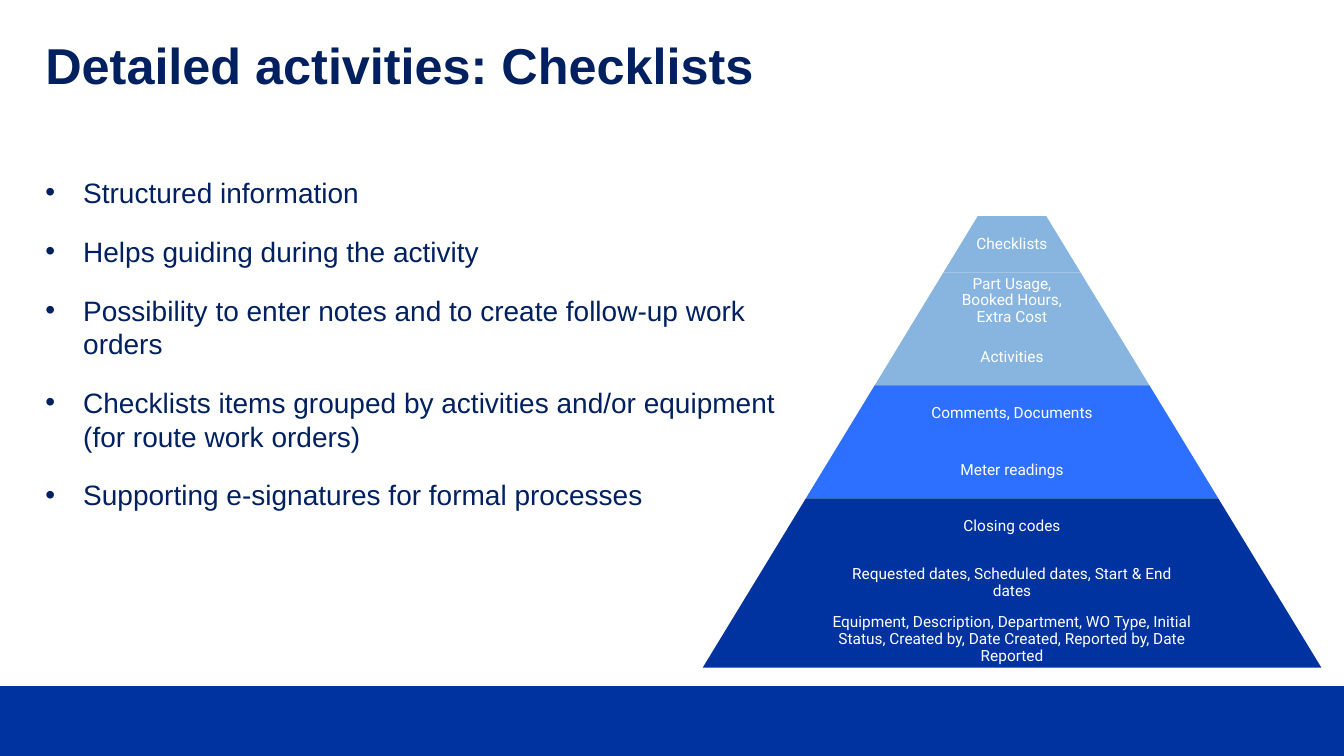
from lxml import etree
from pptx import Presentation
from pptx.dml.color import RGBColor
from pptx.enum import shapes, text
from pptx.oxml import ns
from pptx.util import Pt

# Content
TITLE = "Detailed activities: Checklists"
BULLETS = [
    "Structured information",
    "Helps guiding during the activity",
    "Possibility to enter notes and to create follow-up work orders",
    "Checklists items grouped by activities and/or equipment (for route work orders)",
    "Supporting e-signatures for formal processes",
]
NAVY = RGBColor(0x00, 0x20, 0x60)
BLUE = RGBColor(0x00, 0x33, 0xA0)
BRIGHT = RGBColor(0x2D, 0x70, 0xFF)
LIGHT = RGBColor(0x88, 0xB5, 0xE0)
WHITE = RGBColor(0xFF, 0xFF, 0xFF)
LEVELS = [
    ("Checklists", LIGHT),
    ("Part Usage, Booked Hours, Extra Cost", LIGHT),
    ("Activities", LIGHT),
    ("Comments, Documents", BRIGHT),
    ("Meter readings", BRIGHT),
    ("Closing codes", BLUE),
    ("Requested dates, Scheduled dates, Start & End dates", BLUE),
    ("Equipment, Description, Department, WO Type, Initial Status, Created by, "
     "Date Created, Reported by, Date Reported", BLUE),
]

# Layout in points
SLIDE_WIDTH, SLIDE_HEIGHT = 960, 540
MARGIN = 32.4
FOOTER_TOP = 490.8
PYRAMID_CENTER, PYRAMID_TOP = 722.9, 154.5
LEVEL_HEIGHT, LEVEL_STEP = 40.3, 49.1
TEXT_SHARE = 0.65
BULLET_INDENT = 27

presentation = Presentation()
presentation.slide_width, presentation.slide_height = Pt(SLIDE_WIDTH), Pt(SLIDE_HEIGHT)
slide = presentation.slides.add_slide(presentation.slide_layouts[6])


def add_text(box, lines, *, size, font="Arial", color=NAVY, bold=False, inset=0,
             align=text.PP_ALIGN.LEFT, anchor=text.MSO_ANCHOR.TOP,
             line_spacing=None, before=0, after=0, bullet=False):
    frame = slide.shapes.add_textbox(*map(Pt, box)).text_frame
    frame.word_wrap = True
    frame.vertical_anchor = anchor
    frame.margin_left = frame.margin_right = Pt(inset)
    frame.margin_top = frame.margin_bottom = Pt(inset)
    for index, line in enumerate(lines):
        paragraph = frame.paragraphs[0] if index == 0 else frame.add_paragraph()
        paragraph.text = line
        paragraph.alignment = align
        paragraph.line_spacing = line_spacing
        paragraph.space_before = Pt(before if index else 0)
        paragraph.space_after = Pt(after)
        if bullet:
            properties = paragraph._p.get_or_add_pPr()
            properties.set("marL", str(Pt(BULLET_INDENT)))
            properties.set("indent", str(-Pt(BULLET_INDENT)))
            etree.SubElement(properties, ns.qn("a:buFont"), typeface="Arial")
            etree.SubElement(properties, ns.qn("a:buChar"), char="•")
        paragraph.font.size = Pt(size)
        paragraph.font.name = font
        paragraph.font.bold = bold
        paragraph.font.color.rgb = color


def add_block(kind, box, color):
    shape = slide.shapes.add_shape(kind, *map(Pt, box))
    shape.shadow.inherit = False
    shape.fill.solid()
    shape.fill.fore_color.rgb = color
    shape.line.fill.background()
    return shape


# Footer band
footer = add_block(shapes.MSO_SHAPE.RECTANGLE,
                   (0, FOOTER_TOP, SLIDE_WIDTH, SLIDE_HEIGHT - FOOTER_TOP), BLUE)
footer.line.color.rgb = BLUE
footer.line.width = Pt(1)

# Title and bullets
add_text((MARGIN, 29.5, 895.7, 59), [TITLE], size=36, bold=True, line_spacing=0.9)
add_text((MARGIN, 125.3, 534.2, 362.9), BULLETS, size=20, before=12, after=6, bullet=True)

# Pyramid: each level is one step wider than the level above
for index, (label, color) in enumerate(LEVELS):
    top = PYRAMID_TOP + index * LEVEL_HEIGHT
    width = LEVEL_STEP * (index + 2)
    level = add_block(shapes.MSO_SHAPE.TRAPEZOID,
                      (PYRAMID_CENTER - width / 2, top, width, LEVEL_HEIGHT), color)
    level.adjustments[0] = LEVEL_STEP / 2 / LEVEL_HEIGHT
    label_width = width * TEXT_SHARE
    add_text((PYRAMID_CENTER - label_width / 2, top, label_width, LEVEL_HEIGHT), [label],
             size=11, font="Roboto", color=WHITE, inset=1.4, line_spacing=0.9,
             align=text.PP_ALIGN.CENTER, anchor=text.MSO_ANCHOR.MIDDLE)

presentation.save("out.pptx")
